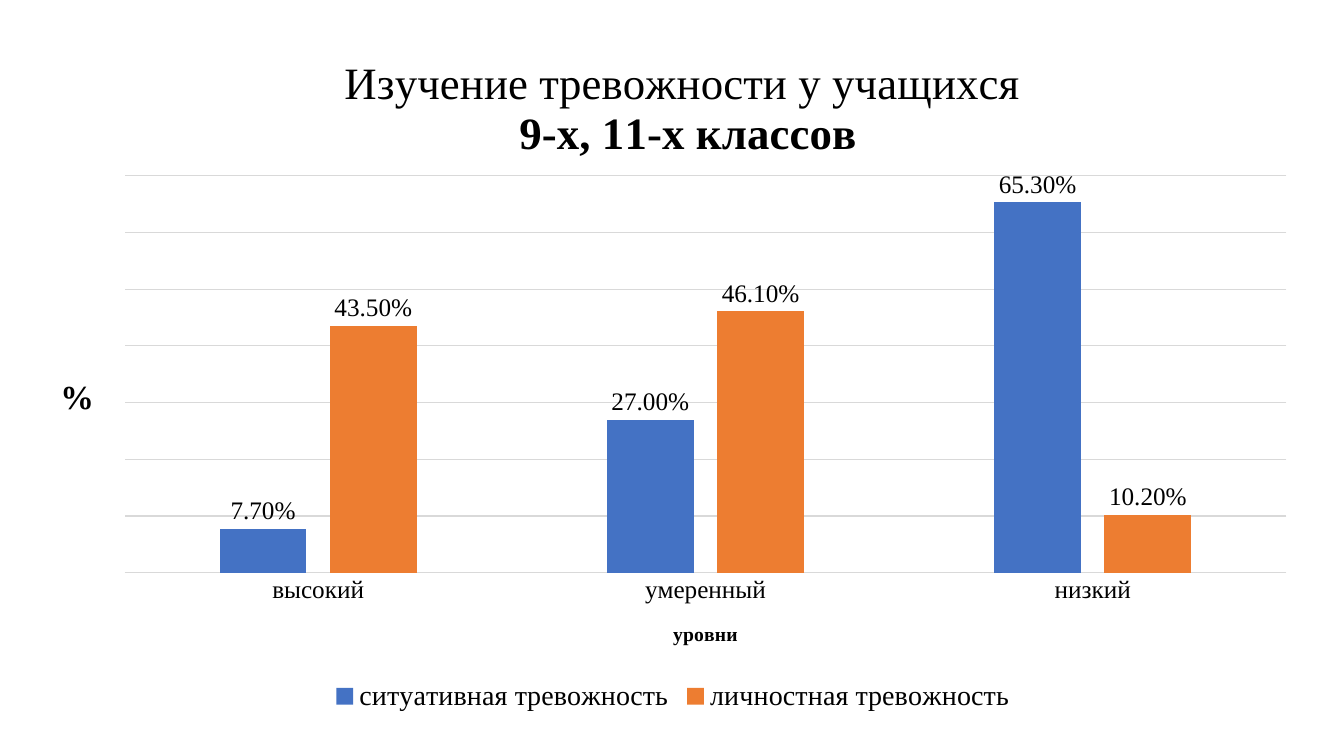
from lxml import etree
from pptx import Presentation
from pptx.chart.data import CategoryChartData
from pptx.dml.color import RGBColor
from pptx.enum.chart import (XL_CHART_TYPE, XL_LABEL_POSITION as LABEL_POS,
                             XL_LEGEND_POSITION as LEGEND_POS, XL_TICK_MARK as TICK)
from pptx.enum.text import PP_ALIGN
from pptx.oxml.ns import qn
from pptx.util import Inches, Pt

FONT, BLACK, GRID = "Times New Roman", "000000", "D9D9D9"
PERCENT = "0.00%"
LEVELS = ["высокий", "умеренный", "низкий"]
SERIES = [
    ("ситуативная тревожность", "4472C4", (0.077, 0.27, 0.653)),
    ("личностная тревожность", "ED7D31", (0.435, 0.461, 0.102)),
]
TITLE = [("Изучение тревожности у учащихся ", False), ("9-х, 11-х классов", True)]
CHART_BOX = (0.35, 0.34, 12.65, 6.78)
PLOT_LAYOUT = {"x": 0.07, "y": 0.207, "w": 0.911, "h": 0.581}
TITLE_LAYOUT = {"x": 0.24, "y": 0.03}
PERCENT_LAYOUT = {"x": 0.015, "y": 0.49}


def rgb(color):
    return RGBColor.from_string(color)


def style(font, size, bold=False):
    for name, value in {"name": FONT, "size": Pt(size), "bold": bold}.items():
        setattr(font, name, value)
    font.color.rgb = rgb(BLACK)


def rule(line):
    line.color.rgb = rgb(GRID)
    line.width = Pt(0.75)


def write(tf, lines, size):
    for i, (text, bold) in enumerate(lines):
        p = tf.paragraphs[0] if i == 0 else tf.add_paragraph()
        p.alignment = PP_ALIGN.CENTER
        style(p.font, size, bold)
        r = p.add_run()
        r.text = text
        style(r.font, size, bold)


def place(element, fractions, index):
    """Set a manual layout, in fractions of the chart's size."""
    layout = element.find(qn("c:layout"))
    if layout is None:
        layout = etree.Element(qn("c:layout"))
        element.insert(index, layout)
    for child in list(layout):
        layout.remove(child)
    manual = etree.SubElement(layout, qn("c:manualLayout"))
    if "w" in fractions:
        etree.SubElement(manual, qn("c:layoutTarget")).set("val", "inner")
    for key in "xy":
        etree.SubElement(manual, qn(f"c:{key}Mode")).set("val", "edge")
    for key, value in fractions.items():
        etree.SubElement(manual, qn(f"c:{key}")).set("val", str(value))


prs = Presentation()
prs.slide_width, prs.slide_height = Inches(13.33), Inches(7.5)
s = prs.slides.add_slide(prs.slide_layouts[6])

data = CategoryChartData(number_format=PERCENT)
data.categories = LEVELS
for name, _, values in SERIES:
    data.add_series(name, values)
chart = s.shapes.add_chart(XL_CHART_TYPE.COLUMN_CLUSTERED,
                           *map(Inches, CHART_BOX), data).chart
style(chart.font, 10)

write(chart.chart_title.text_frame, TITLE, 32)
place(chart.chart_title._element, TITLE_LAYOUT, 1)
place(chart._chartSpace.chart.plotArea, PLOT_LAYOUT, 0)

plot = chart.plots[0]
plot.gap_width, plot.overlap, plot.vary_by_categories = 219, -27, False
for series, (_, color, _) in zip(plot.series, SERIES):
    series.format.fill.solid()
    series.format.fill.fore_color.rgb = rgb(color)
    labels = series.data_labels
    for name, value in {"show_value": True, "position": LABEL_POS.OUTSIDE_END,
                        "number_format": PERCENT,
                        "number_format_is_linked": False}.items():
        setattr(labels, name, value)
    style(labels.font, 18)

levels = chart.category_axis
levels.major_tick_mark = levels.minor_tick_mark = TICK.NONE
style(levels.tick_labels.font, 18)
rule(levels.format.line)
write(levels.axis_title.text_frame, [("уровни", True)], 14)

shares = chart.value_axis
for name, value in {"minimum_scale": 0, "maximum_scale": 0.7, "major_unit": 0.1,
                    "has_major_gridlines": True, "visible": False}.items():
    setattr(shares, name, value)
rule(shares.major_gridlines.format.line)
shares.tick_labels.number_format = PERCENT
shares.tick_labels.number_format_is_linked = False
write(shares.axis_title.text_frame, [("%", True)], 24)
percent_title = shares.axis_title._element
percent_title.find(".//" + qn("a:bodyPr")).set("rot", "0")
place(percent_title, PERCENT_LAYOUT, 1)

chart.has_legend = True
chart.legend.position = LEGEND_POS.BOTTOM
chart.legend.include_in_layout = False
style(chart.legend.font, 20)

prs.save("out.pptx")
